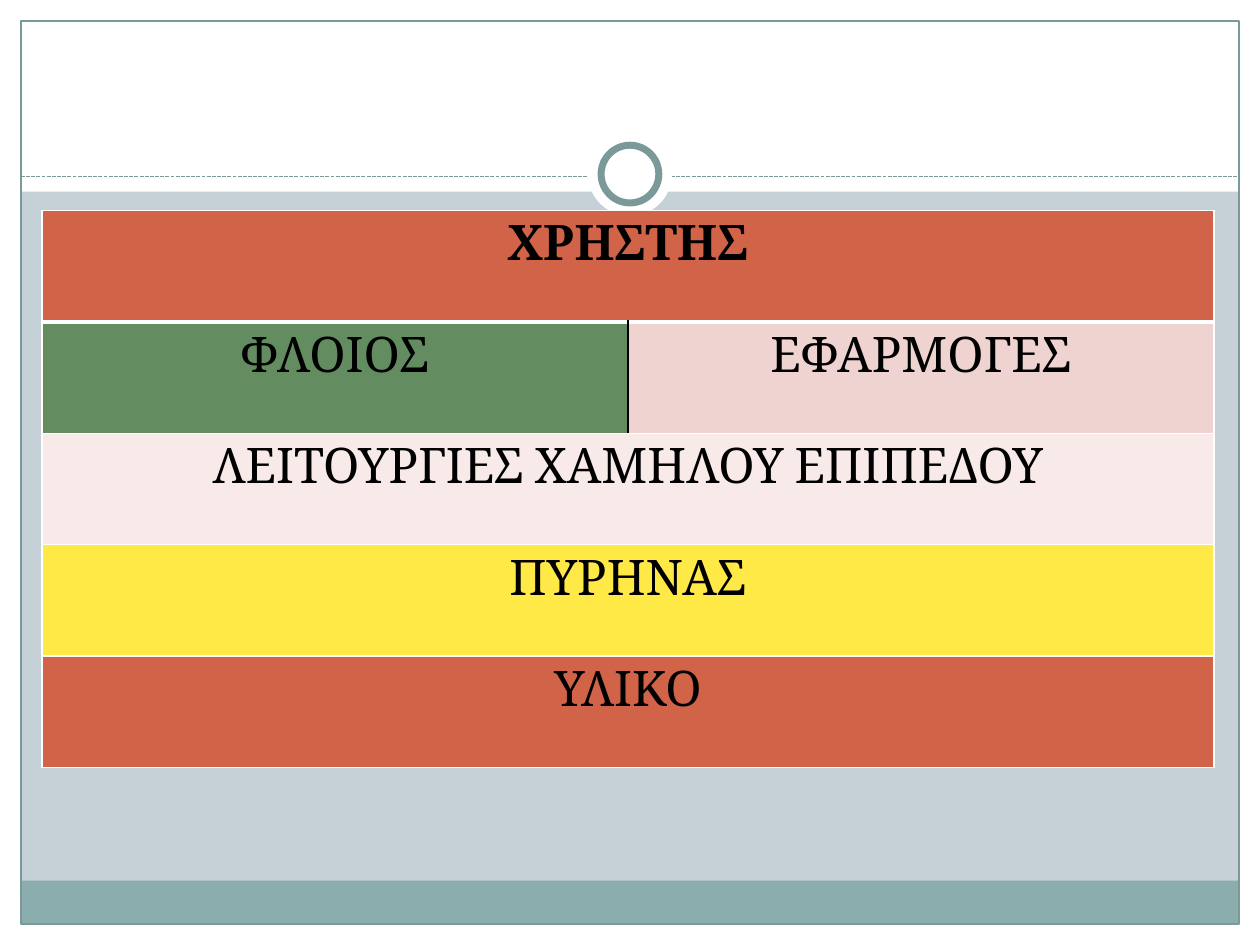
from dataclasses import dataclass
from typing import Optional

from lxml.etree import SubElement
from pptx import Presentation
from pptx.dml.color import RGBColor
from pptx.enum.dml import MSO_LINE
from pptx.enum.shapes import MSO_CONNECTOR, MSO_SHAPE
from pptx.enum.text import PP_ALIGN
from pptx.oxml import parse_xml
from pptx.oxml.ns import nsdecls, qn
from pptx.util import Pt


@dataclass(frozen=True)
class Theme:
    background: str = "C5D1D7"
    paper: str = "FFFFFF"
    ink: str = "000000"
    frame: str = "7C999A"
    footer: str = "8CADAE"
    user: str = "D16349"
    shell: str = "648C61"
    applications: str = "EED3D0"
    low_level: str = "F7EAE9"
    kernel: str = "FFE947"
    font: str = "Cambria"
    layer_size: float = 28
    hairline: float = 0.75
    ring_width: float = 4


@dataclass(frozen=True)
class Panel:
    left: float
    top: float
    width: float
    height: float
    fill: Optional[str] = None
    line: Optional[str] = None
    line_width: float = 0
    preset: MSO_SHAPE = MSO_SHAPE.RECTANGLE


@dataclass(frozen=True)
class Layer:
    text: str
    fill: str
    bold: bool = False


THEME = Theme()
WIDTH, HEIGHT = 720, 540
MARGIN = 12
INNER_WIDTH = WIDTH - 2 * MARGIN
HEADER_HEIGHT = 109.5
DIVIDER_Y = 100.8
RING_CENTER_Y = 99.5
TABLE_LEFT, TABLE_TOP, TABLE_WIDTH = 24, 120.3, 669.6
ROW_HEIGHT = 63.65

LAYER_ROWS = [
    [Layer("ΧΡΗΣΤΗΣ", THEME.user, True)],
    [Layer("ΦΛΟΙΟΣ", THEME.shell), Layer("ΕΦΑΡΜΟΓΕΣ", THEME.applications)],
    [Layer("ΛΕΙΤΟΥΡΓΙΕΣ ΧΑΜΗΛΟΥ ΕΠΙΠΕΔΟΥ", THEME.low_level)],
    [Layer("ΠΥΡΗΝΑΣ", THEME.kernel)],
    [Layer("ΥΛΙΚΟ", THEME.user)],
]


def color(value: str) -> RGBColor:
    return RGBColor.from_string(value)


def circle(diameter: float, line: Optional[str] = None, line_width: float = 0) -> Panel:
    return Panel((WIDTH - diameter) / 2, RING_CENTER_Y - diameter / 2, diameter, diameter,
                 THEME.paper, line, line_width, MSO_SHAPE.OVAL)


def draw_panel(slide, panel: Panel) -> None:
    shape = slide.shapes.add_shape(
        panel.preset, Pt(panel.left), Pt(panel.top), Pt(panel.width), Pt(panel.height))
    shape.shadow.inherit = False
    if panel.fill:
        shape.fill.solid()
        shape.fill.fore_color.rgb = color(panel.fill)
    else:
        shape.fill.background()
    if panel.line:
        shape.line.color.rgb = color(panel.line)
        shape.line.width = Pt(panel.line_width)
    else:
        shape.line.fill.background()


def draw_divider(slide) -> None:
    divider = slide.shapes.add_connector(
        MSO_CONNECTOR.STRAIGHT, Pt(MARGIN), Pt(DIVIDER_Y), Pt(WIDTH - MARGIN), Pt(DIVIDER_Y))
    divider.line.color.rgb = color(THEME.frame)
    divider.line.width = Pt(THEME.hairline)
    divider.line.dash_style = MSO_LINE.SQUARE_DOT
    SubElement(divider._element.spPr, qn("a:effectLst"))


def set_borders(cell, **overrides: tuple[str, float]) -> None:
    properties = cell._tc.get_or_add_tcPr()
    for position, side in enumerate("LRTB"):
        border_color, width = overrides.get(side, (THEME.paper, 1))
        properties.insert(position, parse_xml(
            f'<a:ln{side} {nsdecls("a")} w="{Pt(width)}"><a:solidFill>'
            f'<a:srgbClr val="{border_color}"/></a:solidFill></a:ln{side}>'))


def fill_cell(cell, layer: Layer) -> None:
    cell.fill.solid()
    cell.fill.fore_color.rgb = color(layer.fill)
    cell.text_frame.text = layer.text
    paragraph = cell.text_frame.paragraphs[0]
    paragraph.alignment = PP_ALIGN.CENTER
    font = paragraph.runs[0].font
    font.name = THEME.font
    font.size = Pt(THEME.layer_size)
    font.bold = layer.bold
    font.color.rgb = color(THEME.ink)


def draw_layers(slide, rows: list[list[Layer]]) -> None:
    table = slide.shapes.add_table(
        len(rows), 2, Pt(TABLE_LEFT), Pt(TABLE_TOP),
        Pt(TABLE_WIDTH), Pt(ROW_HEIGHT * len(rows))).table
    for row_index, layers in enumerate(rows):
        table.rows[row_index].height = Pt(ROW_HEIGHT)
        cells = [table.cell(row_index, column) for column in range(2)]
        if len(layers) == 1:
            cells[0].merge(cells[1])
        for cell, layer in zip(cells, layers):
            fill_cell(cell, layer)
        for cell, inner_side in zip(cells, "RL"):
            borders = {}
            if row_index == 0:
                borders["B"] = (THEME.paper, 3)
            elif row_index == 1:
                borders["T"] = (THEME.paper, 3)
            if len(layers) == 2:
                borders[inner_side] = (THEME.ink, 1)
            set_borders(cell, **borders)


def main() -> None:
    presentation = Presentation()
    presentation.slide_width, presentation.slide_height = Pt(WIDTH), Pt(HEIGHT)
    slide = presentation.slides.add_slide(presentation.slide_layouts[6])
    slide.background.fill.solid()
    slide.background.fill.fore_color.rgb = color(THEME.background)

    backdrop = [
        Panel(0, HEIGHT - MARGIN, WIDTH, MARGIN, THEME.paper),
        Panel(0, 0, WIDTH, HEADER_HEIGHT, THEME.paper),
        Panel(0, 0, MARGIN, HEIGHT, THEME.paper),
        Panel(WIDTH - MARGIN, 0, MARGIN, HEIGHT, THEME.paper),
        Panel(MARGIN, 503.3, INNER_WIDTH, 24.5, THEME.footer),
        Panel(MARGIN, MARGIN, INNER_WIDTH, HEIGHT - 2 * MARGIN,
              line=THEME.frame, line_width=THEME.hairline),
    ]
    for panel in backdrop:
        draw_panel(slide, panel)
    draw_divider(slide)
    for ring in (circle(48), circle(33, THEME.frame, THEME.ring_width)):
        draw_panel(slide, ring)
    draw_layers(slide, LAYER_ROWS)
    presentation.save("out.pptx")


if __name__ == "__main__":
    main()
